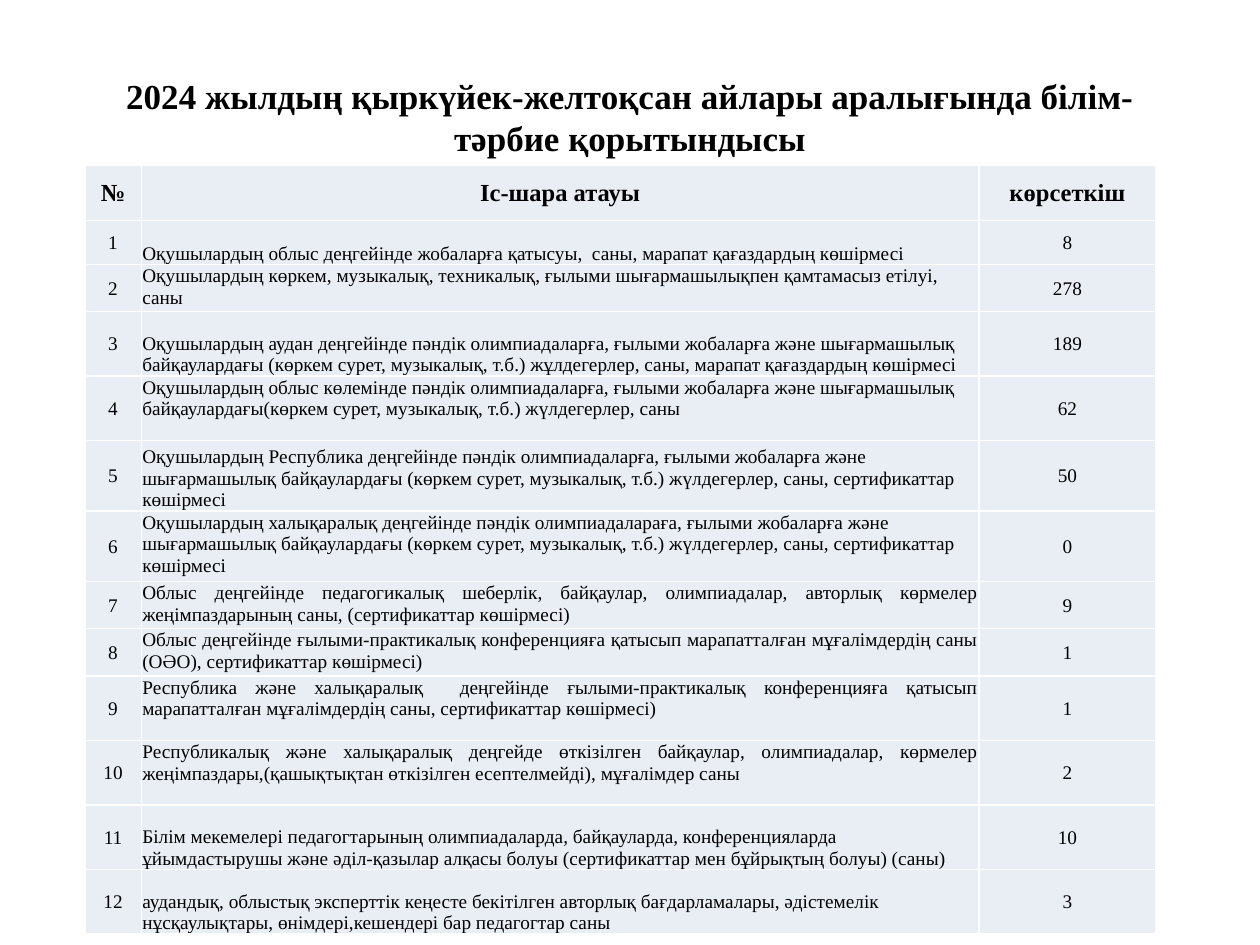
from lxml.etree import SubElement
from pptx import Presentation
from pptx.dml.color import RGBColor
from pptx.enum.text import MSO_ANCHOR as ANCHOR, PP_ALIGN as ALIGN
from pptx.oxml.ns import qn
from pptx.util import Cm, Pt

# Content
TITLE = "2024 жылдың қыркүйек-желтоқсан айлары аралығында білім-тәрбие қорытындысы"
HEADER = ("№", "Іс-шара атауы", "көрсеткіш")
TOP, BOTTOM = ANCHOR.TOP, ANCHOR.BOTTOM
LEFT, JUSTIFY = ALIGN.LEFT, ALIGN.JUSTIFY
SHORT, TALL = 0.88, 1.3  # row heights, cm

# activity, result, row height, anchor, alignment
ACTIVITIES = [
    ("Оқушылардың облыс деңгейінде жобаларға қатысуы,  саны, марапат қағаздардың көшірмесі",
     8, SHORT, BOTTOM, LEFT),
    ("Оқушылардың көркем, музыкалық, техникалық, ғылыми шығармашылықпен қамтамасыз етілуі, саны",
     278, SHORT, TOP, LEFT),
    ("Оқушылардың аудан деңгейінде пәндік олимпиадаларға, ғылыми жобаларға және шығармашылық "
     "байқаулардағы (көркем сурет, музыкалық, т.б.) жұлдегерлер, саны, марапат қағаздардың көшірмесі",
     189, TALL, BOTTOM, LEFT),
    ("Оқушылардың облыс көлемінде пәндік олимпиадаларға, ғылыми жобаларға және шығармашылық "
     "байқаулардағы(көркем сурет, музыкалық, т.б.) жүлдегерлер, саны",
     62, TALL, TOP, LEFT),
    ("Оқушылардың Республика деңгейінде пәндік олимпиадаларға, ғылыми жобаларға және шығармашылық "
     "байқаулардағы (көркем сурет, музыкалық, т.б.) жүлдегерлер, саны, сертификаттар көшірмесі",
     50, TALL, BOTTOM, LEFT),
    ("Оқушылардың халықаралық деңгейінде пәндік олимпиадалараға, ғылыми жобаларға және шығармашылық "
     "байқаулардағы (көркем сурет, музыкалық, т.б.) жүлдегерлер, саны, сертификаттар көшірмесі",
     0, TALL, TOP, LEFT),
    ("Облыс деңгейінде педагогикалық шеберлік, байқаулар, олимпиадалар, авторлық көрмелер "
     "жеңімпаздарының саны, (сертификаттар көшірмесі)",
     9, SHORT, TOP, JUSTIFY),
    ("Облыс деңгейінде ғылыми-практикалық конференцияға қатысып марапатталған мұғалімдердің саны "
     "(ОӘО), сертификаттар көшірмесі)",
     1, SHORT, TOP, JUSTIFY),
    ("Республика және халықаралық  деңгейінде ғылыми-практикалық конференцияға қатысып "
     "марапатталған мұғалімдердің саны, сертификаттар көшірмесі)",
     1, TALL, TOP, JUSTIFY),
    ("Республикалық және халықаралық деңгейде өткізілген байқаулар, олимпиадалар, көрмелер "
     "жеңімпаздары,(қашықтықтан өткізілген есептелмейді), мұғалімдер саны",
     2, TALL, TOP, JUSTIFY),
    ("Білім мекемелері педагогтарының олимпиадаларда, байқауларда, конференцияларда ұйымдастырушы "
     "және әділ-қазылар алқасы болуы (сертификаттар мен бұйрықтың болуы) (саны)",
     10, TALL, BOTTOM, LEFT),
    ("аудандық, облыстық эксперттік кеңесте бекітілген авторлық бағдарламалары, әдістемелік "
     "нұсқаулықтары, өнімдері,кешендері бар педагогтар саны",
     3, TALL, BOTTOM, LEFT),
]

# Format
FONT = "Times New Roman"
BLACK = RGBColor(0x00, 0x00, 0x00)
WHITE = RGBColor(0xFF, 0xFF, 0xFF)
PALE_BLUE = RGBColor(0xE9, 0xED, 0xF4)
COLUMN_WIDTHS = (1.14, 16.89, 3.56)
HEADER_HEIGHT = 1.11
TITLE_FONT = {"name": FONT, "size": Pt(20), "bold": True}
HEADER_FONT = {"name": FONT, "size": Pt(14), "bold": True}
BODY_FONT = {"name": FONT, "size": Pt(11), "bold": False}
CELL_MARGINS = {"margin_left": Cm(0.02), "margin_right": Cm(0.02),
                "margin_top": Cm(0.02), "margin_bottom": 0}


def write(tf, text, font, align=ALIGN.CENTER):
    p = tf.paragraphs[0]
    p.alignment = align
    r = p.add_run()
    r.text = text
    r.font.color.rgb = BLACK
    for name, value in font.items():
        setattr(r.font, name, value)


def add_borders(cell):
    tc_pr = cell._tc.get_or_add_tcPr()
    for i, side in enumerate(("lnL", "lnR", "lnT", "lnB")):
        ln = SubElement(tc_pr, qn(f"a:{side}"), w=str(Pt(1)))
        fill = SubElement(ln, qn("a:solidFill"))
        SubElement(fill, qn("a:srgbClr"), val=str(WHITE))
        tc_pr.insert(i, ln)  # borders come before the cell fill


def fill_cell(cell, text, font, anchor=ANCHOR.MIDDLE, align=ALIGN.CENTER):
    for name, value in CELL_MARGINS.items():
        setattr(cell, name, value)
    cell.vertical_anchor = anchor
    cell.fill.solid()
    cell.fill.fore_color.rgb = PALE_BLUE
    add_borders(cell)
    write(cell.text_frame, text, font, align)


prs = Presentation()
prs.slide_width, prs.slide_height = Cm(25.4), Cm(19.05)
s = prs.slides.add_slide(prs.slide_layouts[6])

# Title
tf = s.shapes.add_textbox(Cm(1.27), Cm(0.76), Cm(22.86), Cm(3.18)).text_frame
tf.word_wrap = True
tf.vertical_anchor = ANCHOR.MIDDLE
write(tf, TITLE, TITLE_FONT)

# Table grid
heights = [HEADER_HEIGHT] + [activity[2] for activity in ACTIVITIES]
table = s.shapes.add_table(len(heights), len(COLUMN_WIDTHS), Cm(1.71), Cm(3.34),
                           Cm(sum(COLUMN_WIDTHS)), Cm(sum(heights))).table
table.first_row = table.horz_banding = False
for column, width in zip(table.columns, COLUMN_WIDTHS):
    column.width = Cm(width)
for row, height in zip(table.rows, heights):
    row.height = Cm(height)

# Table text
for col, text in enumerate(HEADER):
    fill_cell(table.cell(0, col), text, HEADER_FONT)
for n, (activity, result, _, anchor, align) in enumerate(ACTIVITIES, 1):
    fill_cell(table.cell(n, 0), str(n), BODY_FONT)
    fill_cell(table.cell(n, 1), activity, BODY_FONT, anchor, align)
    fill_cell(table.cell(n, 2), str(result), BODY_FONT)

prs.save("out.pptx")
